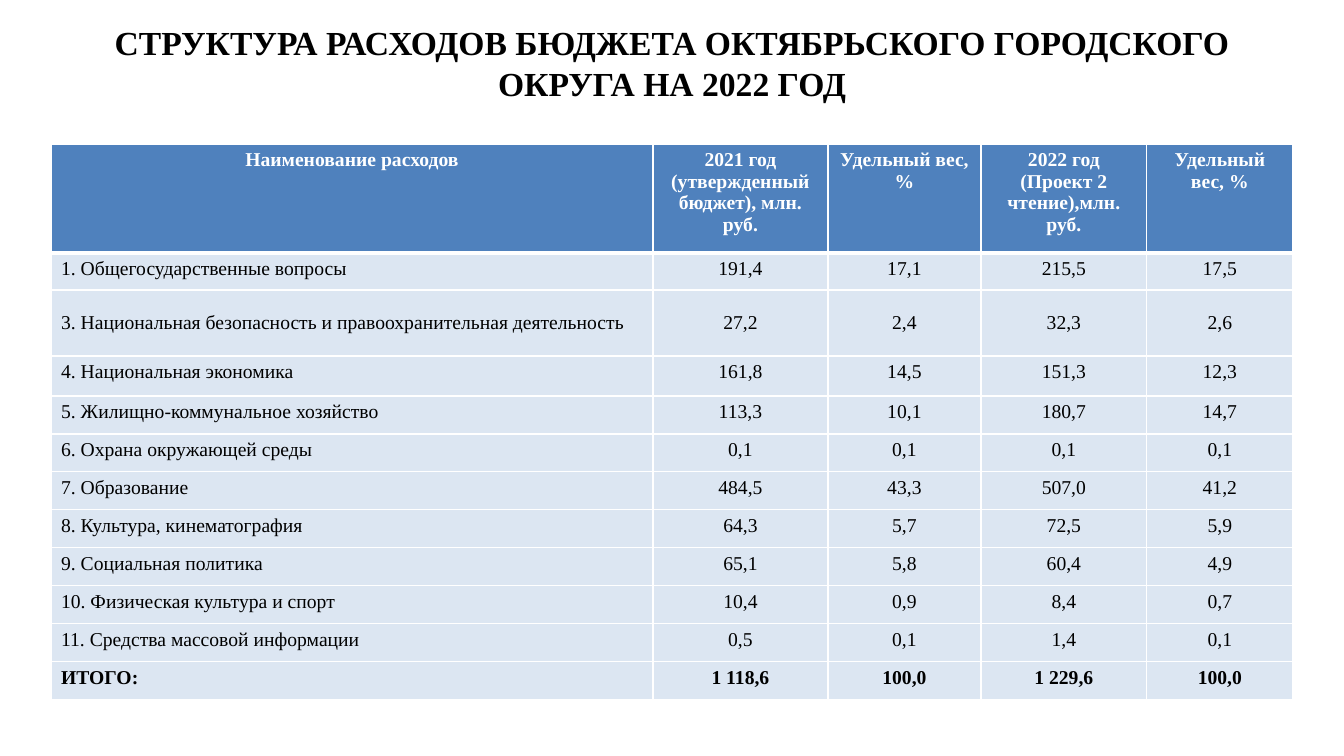
"""Build the budget expenditure slide."""
from itertools import product

from lxml.etree import SubElement
from pptx import Presentation
from pptx.dml.color import RGBColor
from pptx.enum.text import MSO_ANCHOR as ANCHOR, MSO_AUTO_SIZE as FIT, PP_ALIGN as ALIGN
from pptx.oxml.ns import qn
from pptx.util import Emu, Pt

PX = 914400 / 100.8
WHITE = RGBColor(0xFF, 0xFF, 0xFF)
BLACK = RGBColor(0x00, 0x00, 0x00)
BLUE = RGBColor(0x4F, 0x81, 0xBD)
PALE_BLUE = RGBColor(0xDC, 0xE6, 0xF2)
FONT = "Times New Roman"

TITLE = "СТРУКТУРА РАСХОДОВ БЮДЖЕТА ОКТЯБРЬСКОГО ГОРОДСКОГО ОКРУГА НА 2022 ГОД"
TITLE_BOX = (67, 14, 1210, 97)
TABLE_BOX = (51, 144, 1242, 557)
COLUMN_WIDTHS = (602, 175, 153, 166, 146)
ROW_HEIGHTS = (109, 37, 66, 40) + (38,) * 8
TALL_ROW = 2
EXPENSES = (
    ("Наименование расходов", "2021 год (утвержденный бюджет), млн. руб.",
     "Удельный вес,%", "2022 год (Проект 2 чтение),млн. руб.", "Удельный вес, %"),
    ("1. Общегосударственные вопросы", "191,4", "17,1", "215,5", "17,5"),
    ("3. Национальная безопасность и правоохранительная деятельность",
     "27,2", "2,4", "32,3", "2,6"),
    ("4. Национальная экономика", "161,8", "14,5", "151,3", "12,3"),
    ("5. Жилищно-коммунальное хозяйство", "113,3", "10,1", "180,7", "14,7"),
    ("6. Охрана окружающей среды", "0,1", "0,1", "0,1", "0,1"),
    ("7. Образование", "484,5", "43,3", "507,0", "41,2"),
    ("8. Культура, кинематография", "64,3", "5,7", "72,5", "5,9"),
    ("9. Социальная политика", "65,1", "5,8", "60,4", "4,9"),
    ("10. Физическая культура и спорт", "10,4", "0,9", "8,4", "0,7"),
    ("11. Средства массовой информации", "0,5", "0,1", "1,4", "0,1"),
    ("ИТОГО:", "1 118,6", "100,0", "1 229,6", "100,0"),
)


def px(length):
    """Turn pixels into EMU."""
    return Emu(round(length * PX))


def set_values(target, values):
    """Set each named attribute of the target."""
    for name, value in values.items():
        setattr(target, name, value)


def write(frame, text, align, size, bold, color):
    """Write one formatted paragraph into a text frame."""
    para = frame.paragraphs[0]
    para.alignment = align
    span = para.add_run()
    span.text = text
    set_values(span.font, {"name": FONT, "size": Pt(size), "bold": bold})
    span.font.color.rgb = color


def draw_borders(cell, widths):
    """Draw white cell borders with the given widths in points."""
    properties = cell._tc.get_or_add_tcPr()
    for index, (side, width) in enumerate(widths.items()):
        line = properties.makeelement(qn(f"a:{side}"), {"w": str(Pt(width))})
        fill = SubElement(line, qn("a:solidFill"))
        SubElement(fill, qn("a:srgbClr"), val=str(WHITE))
        properties.insert(index, line)


def add_title(page, box):
    """Place the slide title in its box."""
    title = page.shapes.title
    set_values(title, dict(zip(("left", "top", "width", "height"), map(px, box))))
    frame = title.text_frame
    set_values(frame, {"word_wrap": True, "auto_size": FIT.NONE,
                       "vertical_anchor": ANCHOR.MIDDLE})
    write(frame, TITLE, ALIGN.CENTER, 24, True, BLACK)


def add_expenses(page, box):
    """Place the expenditure table in its box."""
    table = page.shapes.add_table(
        len(ROW_HEIGHTS), len(COLUMN_WIDTHS), *map(px, box)).table
    for column, width in zip(table.columns, COLUMN_WIDTHS):
        column.width = px(width)
    for row, height in zip(table.rows, ROW_HEIGHTS):
        row.height = px(height)
    last = len(ROW_HEIGHTS) - 1
    for row, column in product(range(len(ROW_HEIGHTS)), range(len(COLUMN_WIDTHS))):
        cell = table.cell(row, column)
        header = row == 0
        cell.fill.solid()
        cell.fill.fore_color.rgb = BLUE if header else PALE_BLUE
        cell.vertical_anchor = ANCHOR.MIDDLE if row == TALL_ROW else ANCHOR.TOP
        align = ALIGN.LEFT if column == 0 and not header else ALIGN.CENTER
        write(cell.text_frame, EXPENSES[row][column], align, 14,
              row in (0, last), WHITE if header else BLACK)
        draw_borders(cell, {"lnL": 1, "lnR": 1, "lnT": 3 if row == 1 else 1,
                            "lnB": 3 if header else 1})


def main():
    """Build and save the deck."""
    deck = Presentation()
    set_values(deck, {"slide_width": px(1344), "slide_height": px(756)})
    page = deck.slides.add_slide(deck.slide_layouts[5])
    add_title(page, TITLE_BOX)
    add_expenses(page, TABLE_BOX)
    deck.save("out.pptx")


if __name__ == "__main__":
    main()
